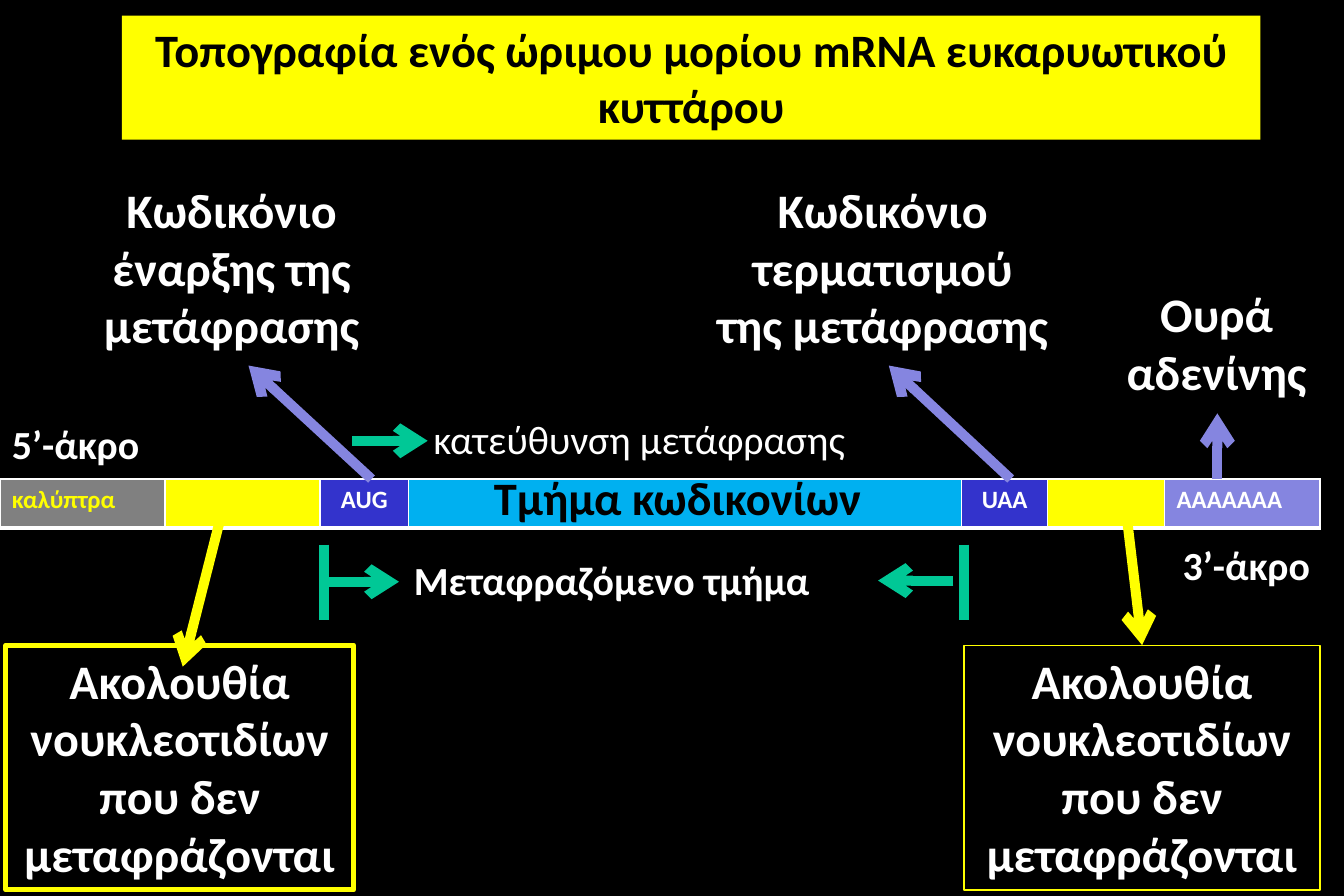
"""Build a slide that maps the parts of a mature eukaryotic mRNA molecule."""
import pptx
import pptx.dml.color
import pptx.enum.shapes
import pptx.enum.text
import pptx.oxml
import pptx.oxml.ns
import pptx.util

PX = 9144
RGBColor = pptx.dml.color.RGBColor
BLACK = RGBColor(0x00, 0x00, 0x00)
WHITE = RGBColor(0xFF, 0xFF, 0xFF)
YELLOW = RGBColor(0xFF, 0xFF, 0x00)
GREY = RGBColor(0x80, 0x80, 0x80)
BLUE = RGBColor(0x33, 0x33, 0xCC)
SKY = RGBColor(0x00, 0xB0, 0xF0)
LILAC = RGBColor(0x85, 0x85, 0xE0)
GREEN = RGBColor(0x00, 0xC8, 0x96)

LEFT = pptx.enum.text.PP_ALIGN.LEFT
CENTER = pptx.enum.text.PP_ALIGN.CENTER
UNTRANSLATED = "Ακολουθία νουκλεοτιδίων που δεν μεταφράζονται"

SEGMENTS = [
    (138, GREY, "καλύπτρα", YELLOW, LEFT),
    (130, YELLOW, "", WHITE, LEFT),
    (74, BLUE, "AUG", WHITE, CENTER),
    (463, SKY, "", WHITE, LEFT),
    (72, BLUE, "UAA", WHITE, CENTER),
    (98, YELLOW, "", WHITE, LEFT),
    (130, LILAC, "AAAAAΑΑ", WHITE, LEFT),
]
LABELS = [
    ("5’-άκρο", (0, 346, 128, 50), 24, WHITE, True, LEFT, False),
    ("3’-άκρο", (980, 448, 128, 50), 24, WHITE, True, LEFT, False),
    ("Κωδικόνιο έναρξης της μετάφρασης", (74, 146, 240, 157), 29, WHITE, True, CENTER, True),
    ("Κωδικόνιο τερματισμού της μετάφρασης", (589, 146, 300, 157), 29, WHITE, True, CENTER, True),
    ("Ουρά αδενίνης", (912, 233, 213, 108), 29, WHITE, True, CENTER, True),
    ("Τμήμα κωδικονίων", (366, 388, 402, 57), 28, BLACK, True, CENTER, True),
    ("Μεταφραζόμενο τμήμα", (311, 460, 402, 50), 24, WHITE, True, CENTER, True),
    ("κατεύθυνση μετάφρασης", (334, 342, 402, 50), 24, WHITE, False, CENTER, True),
]
FRAMES = [((5, 540, 291, 205), 3), ((807, 540, 298, 205), 0.75)]
LINES = [
    ((185, 432, 153, 558), YELLOW, True),
    ((940, 406, 956, 540), YELLOW, True),
    ((311, 401, 208, 306), LILAC, True),
    ((846, 401, 744, 306), LILAC, True),
    ((1019, 401, 1019, 346), LILAC, True),
    ((271, 456, 271, 519), GREEN, False),
    ((807, 456, 807, 519), GREEN, False),
    ((271, 487, 334, 487), GREEN, True),
    ((798, 486, 735, 486), GREEN, True),
    ((295, 369, 358, 369), GREEN, True),
]


def px(lengths):
    """Turn whole px lengths into EMU."""
    return [length * PX for length in lengths]


def write(frame, wording, size, colour, bold=True, align=CENTER, wrap=True):
    """Put one formatted paragraph into a text frame."""
    layout = {
        "word_wrap": wrap,
        "auto_size": pptx.enum.text.MSO_AUTO_SIZE.NONE,
        "vertical_anchor": pptx.enum.text.MSO_ANCHOR.TOP,
    }
    for name, setting in layout.items():
        setattr(frame, name, setting)
    paragraph = frame.paragraphs[0]
    paragraph.alignment = align
    run = paragraph.add_run()
    run.text = wording
    lettering = {"name": "Calibri", "size": pptx.util.Pt(size), "bold": bold}
    for name, setting in lettering.items():
        setattr(run.font, name, setting)
    run.font.color.rgb = colour


def add_title(slide):
    """Fill and place the yellow title bar."""
    title = slide.shapes.title
    title.left, title.top, title.width, title.height = px((102, 13, 953, 104))
    title.fill.solid()
    title.fill.fore_color.rgb = YELLOW
    write(title.text_frame, "Τοπογραφία ενός ώριμου μορίου mRNA ευκαρυωτικού κυττάρου", 28, BLACK)


def add_border(cell, side, points):
    """Draw one white border of a cell."""
    namespace = pptx.oxml.ns.nsdecls("a")
    cell._tc.get_or_add_tcPr().append(pptx.oxml.parse_xml(
        f'<a:ln{side} {namespace} w="{points * 12700}"><a:solidFill>'
        f'<a:srgbClr val="{WHITE}"/></a:solidFill></a:ln{side}>'))


def add_strand(slide):
    """Draw the mRNA strand as a table of one row."""
    width = sum(segment[0] for segment in SEGMENTS)
    strand = slide.shapes.add_table(1, len(SEGMENTS), *px((0, 401, width, 41))).table
    strand.first_row = strand.horz_banding = False
    for column, (width, fill, wording, colour, align) in enumerate(SEGMENTS):
        strand.columns[column].width = width * PX
        cell = strand.cell(0, column)
        for side, points in {"L": 1, "R": 1, "T": 1, "B": 3}.items():
            add_border(cell, side, points)
        cell.fill.solid()
        cell.fill.fore_color.rgb = fill
        if wording:
            write(cell.text_frame, wording, 15, colour, align=align)


def add_label(slide, wording, place, *style):
    """Add a free-standing label."""
    label = slide.shapes.add_textbox(*px(place))
    write(label.text_frame, wording, *style)


def add_frame(slide, place, weight):
    """Add a yellow outline around the untranslated sequence note."""
    frame = slide.shapes.add_shape(pptx.enum.shapes.MSO_SHAPE.RECTANGLE, *px(place))
    frame.shadow.inherit = False
    frame.fill.background()
    frame.line.color.rgb = YELLOW
    frame.line.width = pptx.util.Pt(weight)
    write(frame.text_frame, UNTRANSLATED, 29, WHITE)


def add_line(slide, ends, colour, pointed):
    """Add a thick line, with an arrowhead at its end if pointed."""
    line = slide.shapes.add_connector(pptx.enum.shapes.MSO_CONNECTOR.STRAIGHT, *px(ends))
    line.line.color.rgb = colour
    line.line.width = pptx.util.Pt(6)
    if pointed:
        head = pptx.oxml.parse_xml(f'<a:tailEnd {pptx.oxml.ns.nsdecls("a")} type="arrow"/>')
        line.get_or_add_ln().append(head)
    plain = pptx.oxml.parse_xml(f'<a:effectLst {pptx.oxml.ns.nsdecls("a")}/>')
    line._element.spPr.append(plain)


def main():
    """Build and save the slide."""
    deck = pptx.Presentation()
    deck.slide_width, deck.slide_height = px((1125, 750))
    slide = deck.slides.add_slide(deck.slide_layouts[5])
    slide.background.fill.solid()
    slide.background.fill.fore_color.rgb = BLACK
    add_title(slide)
    add_strand(slide)
    for frame in FRAMES:
        add_frame(slide, *frame)
    for line in LINES:
        add_line(slide, *line)
    for label in LABELS:
        add_label(slide, *label)
    deck.save("out.pptx")


if __name__ == "__main__":
    main()
